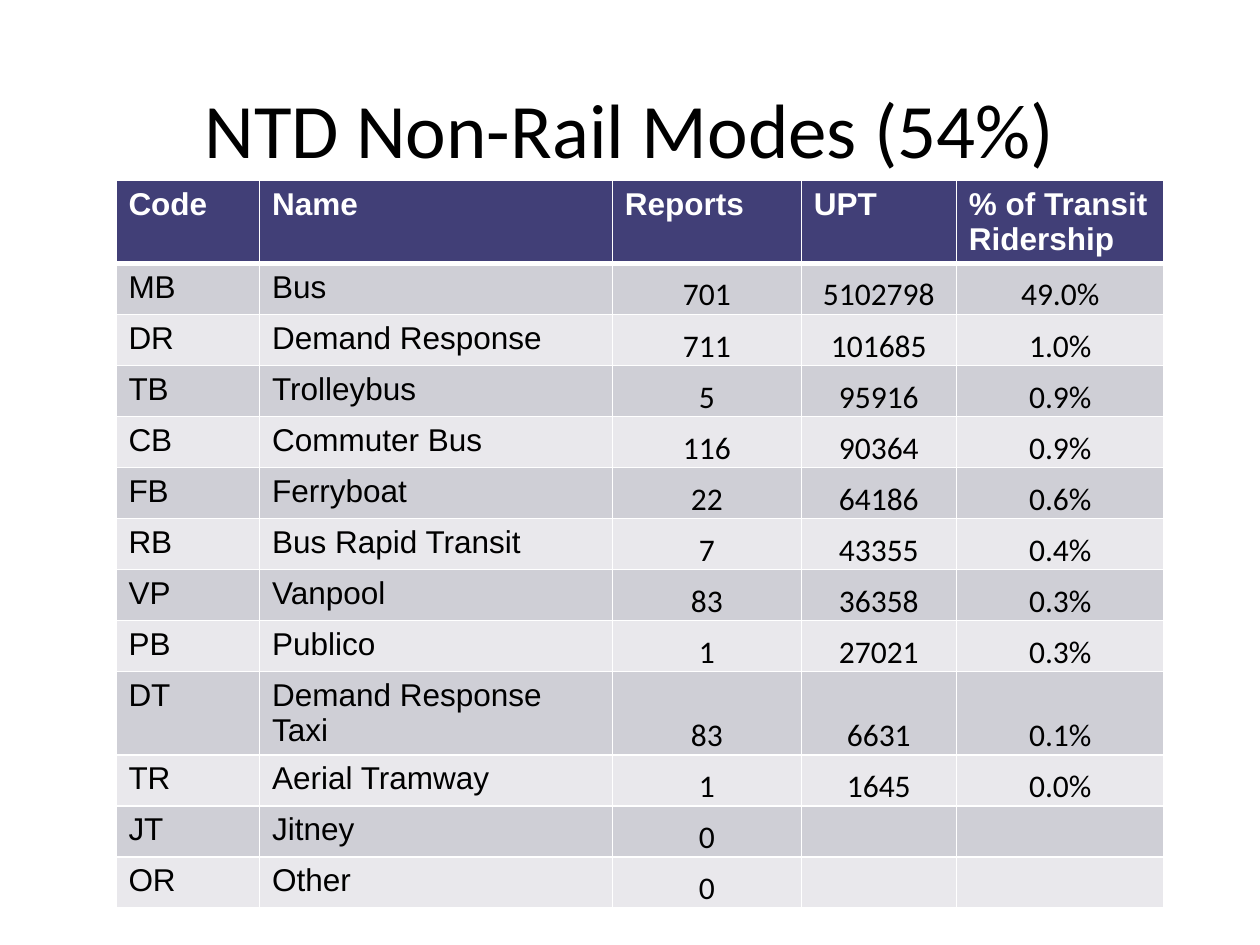
from lxml import etree
from pptx import Presentation
from pptx.dml.color import RGBColor
from pptx.enum.text import MSO_ANCHOR, PP_ALIGN
from pptx.oxml.ns import qn
from pptx.util import Inches, Pt

BLACK = RGBColor(0x00, 0x00, 0x00)
WHITE = RGBColor(0xFF, 0xFF, 0xFF)
NAVY = RGBColor(0x41, 0x3F, 0x77)
BAND_DARK = RGBColor(0xCF, 0xCF, 0xD6)
BAND_LIGHT = RGBColor(0xE9, 0xE8, 0xEC)

COLUMN_WIDTHS = [1.14, 2.8, 1.5, 1.23, 1.65]
ROWS = [
    ("Code", "Name", "Reports", "UPT", "% of Transit Ridership"),
    ("MB", "Bus", "701", "5102798", "49.0%"),
    ("DR", "Demand Response", "711", "101685", "1.0%"),
    ("TB", "Trolleybus", "5", "95916", "0.9%"),
    ("CB", "Commuter Bus", "116", "90364", "0.9%"),
    ("FB", "Ferryboat", "22", "64186", "0.6%"),
    ("RB", "Bus Rapid Transit", "7", "43355", "0.4%"),
    ("VP", "Vanpool", "83", "36358", "0.3%"),
    ("PB", "Publico", "1", "27021", "0.3%"),
    ("DT", "Demand Response Taxi", "83", "6631", "0.1%"),
    ("TR", "Aerial Tramway", "1", "1645", "0.0%"),
    ("JT", "Jitney", "0", "", ""),
    ("OR", "Other", "0", "", ""),
]


def add_borders(cell, **widths):
    """Draw white cell borders; widths are points keyed by side (L, R, T, B)."""
    properties = cell._tc.get_or_add_tcPr()
    for side, width in widths.items():
        line = etree.SubElement(properties, qn(f"a:ln{side}"), w=str(Pt(width)))
        fill = etree.SubElement(line, qn("a:solidFill"))
        etree.SubElement(fill, qn("a:srgbClr"), val=str(WHITE))


deck = Presentation()
deck.slide_width, deck.slide_height = Inches(10), Inches(7.5)
page = deck.slides.add_slide(deck.slide_layouts[5])

title = page.shapes.title
title.left, title.top = Inches(0.5), Inches(0.48)
title.width, title.height = Inches(9), Inches(1.07)
title.text_frame.text = "NTD Non-Rail Modes (54%)"
title.text_frame.vertical_anchor = MSO_ANCHOR.MIDDLE
heading = title.text_frame.paragraphs[0]
heading.alignment = PP_ALIGN.CENTER
heading_font = heading.runs[0].font
heading_font.name, heading_font.size = "Calibri", Pt(44)
heading_font.color.rgb = BLACK

table = page.shapes.add_table(
    len(ROWS), len(COLUMN_WIDTHS),
    Inches(0.92), Inches(1.43), Inches(sum(COLUMN_WIDTHS)), Inches(5.27),
).table
for column, width in zip(table.columns, COLUMN_WIDTHS):
    column.width = Inches(width)

for row, values in enumerate(ROWS):
    is_header = row == 0
    for col, value in enumerate(values):
        cell = table.cell(row, col)
        is_number = not is_header and col >= 2
        add_borders(cell, L=1, R=1, T=3 if row == 1 else 1, B=3 if is_header else 1)
        cell.fill.solid()
        if is_header:
            cell.fill.fore_color.rgb = NAVY
        else:
            cell.fill.fore_color.rgb = BAND_DARK if row % 2 else BAND_LIGHT
        if not value:
            continue
        cell.text_frame.text = value
        para = cell.text_frame.paragraphs[0]
        if is_number:
            cell.vertical_anchor = MSO_ANCHOR.BOTTOM
            cell.margin_left = cell.margin_right = cell.margin_top = Inches(0.01)
            cell.margin_bottom = 0
            para.alignment = PP_ALIGN.CENTER
        font = para.runs[0].font
        font.name = "Calibri" if is_number else "Arial"
        font.size = Pt(18)
        font.bold = is_header
        font.color.rgb = WHITE if is_header else BLACK

deck.save("out.pptx")
